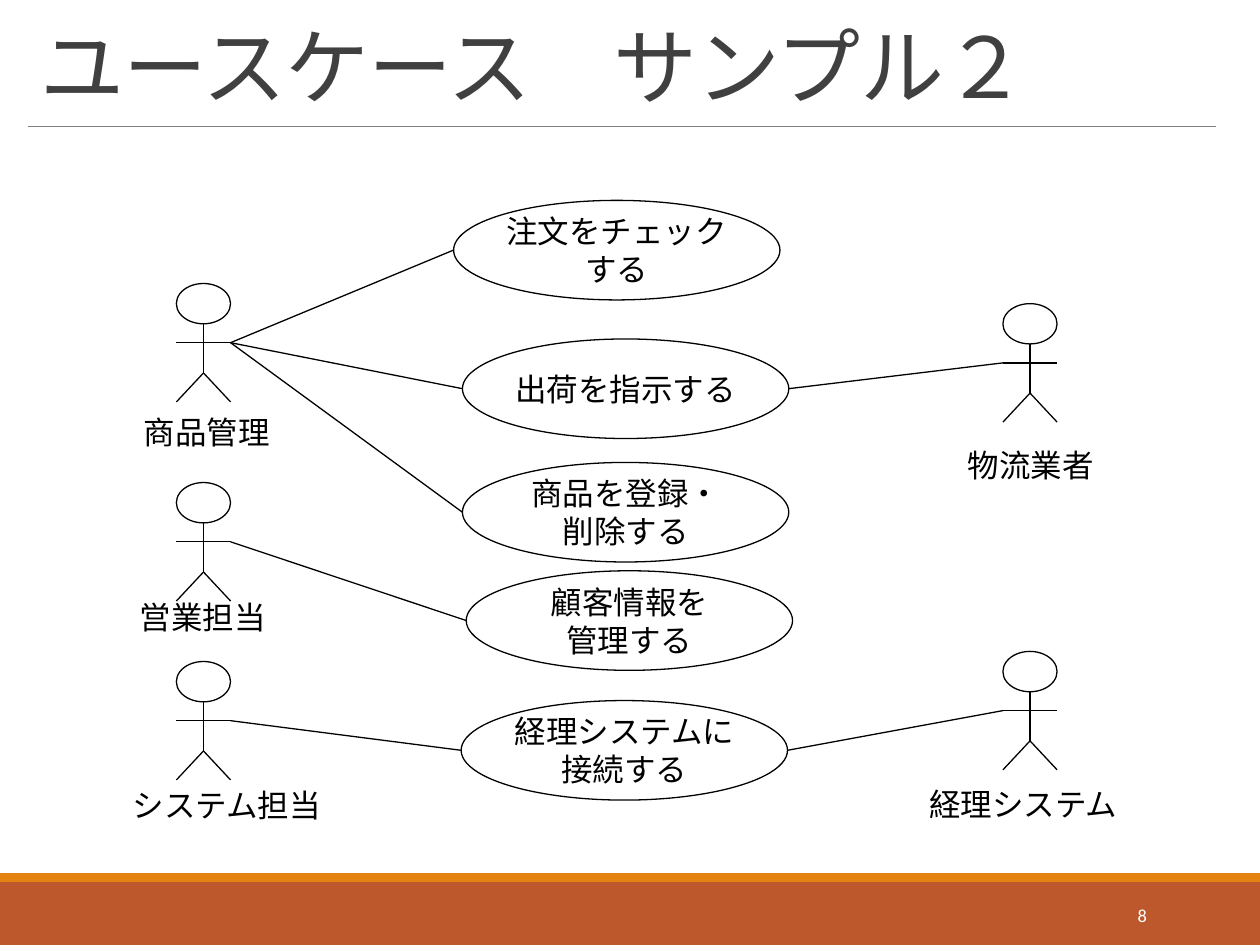
from pptx import Presentation
from pptx.dml.color import RGBColor
from pptx.enum.shapes import MSO_CONNECTOR, MSO_SHAPE
from pptx.enum.text import MSO_ANCHOR as ANCHOR, PP_ALIGN as ALIGN
from pptx.oxml.ns import qn
from pptx.util import Inches, Pt
from lxml.etree import SubElement

COLORS = {
    "black": "000000",
    "white": "FFFFFF",
    "title": "404040",
    "rule": "808080",
    "band": "BD582C",
    "stripe": "E48312",
}
FONT = "Calibri"
CASE_W, CASE_H = 2.59, 0.79
ACTOR_W, HEAD_H, ARM_Y, HIP_Y, FOOT_Y = 0.43, 0.32, 0.47, 0.71, 0.94

ACTORS = {
    "商品管理": {"at": (1.4, 2.25), "label": (0.8, 3.23, 1.68)},
    "営業担当": {"at": (1.4, 3.83), "label": (0.77, 4.7, 1.68)},
    "システム担当": {"at": (1.4, 5.25), "label": (0.69, 6.19, 2.22)},
    "物流業者": {"at": (7.96, 2.41), "label": (7.34, 3.49, 1.68)},
    "経理システム": {"at": (7.96, 5.17), "label": (7.01, 6.18, 2.22)},
}
CASES = [
    {"at": (3.6, 1.59), "lines": ["注文をチェック", "する"], "left": "商品管理"},
    {"at": (3.67, 2.69), "lines": ["出荷を指示する"], "left": "商品管理",
     "right": "物流業者"},
    {"at": (3.67, 3.67), "lines": ["商品を登録・", "削除する"], "left": "商品管理"},
    {"at": (3.7, 4.53), "lines": ["顧客情報を", "管理する"], "left": "営業担当"},
    {"at": (3.66, 5.56), "lines": ["経理システムに", "接続する"],
     "left": "システム担当", "right": "経理システム"},
]


def rgb(name):
    return RGBColor.from_string(COLORS[name])


def write(sp, lines, size=18, color="black", align=ALIGN.CENTER, spacing=None, **frame):
    tf = sp.text_frame
    for name, value in frame.items():
        setattr(tf, name, value)
    for i, line in enumerate(lines):
        p = tf.paragraphs[0] if i == 0 else tf.add_paragraph()
        p.alignment = align
        p.line_spacing = spacing
        r = p.add_run()
        r.text = line
        for name, value in {"name": FONT, "size": Pt(size)}.items():
            setattr(r.font, name, value)
        r.font.color.rgb = rgb(color)
    return sp


def add_text(slide, box, text, **style):
    sp = slide.shapes.add_textbox(*map(Inches, box))
    return write(sp, [text], **{"word_wrap": True, **style})


def add_bar(slide, box, color):
    sp = slide.shapes.add_shape(MSO_SHAPE.RECTANGLE, *map(Inches, box))
    sp.shadow.inherit = False
    sp.fill.solid()
    sp.fill.fore_color.rgb = rgb(color)
    sp.line.fill.background()


def add_line(shapes, start, end, color="black", width=0.75):
    line = shapes.add_connector(MSO_CONNECTOR.STRAIGHT, *map(Inches, (*start, *end)))
    line.line.color.rgb = rgb(color)
    line.line.width = Pt(width)
    SubElement(line._element.spPr, qn("a:effectLst"))


def add_ellipse(shapes, box):
    sp = shapes.add_shape(MSO_SHAPE.OVAL, *map(Inches, box))
    sp.shadow.inherit = False
    sp.fill.background()
    sp.line.color.rgb = rgb("black")
    sp.line.width = Pt(0.75)
    return sp


def add_actor(slide, name, at, label):
    x, y = at
    mid, right = x + ACTOR_W / 2, x + ACTOR_W
    hip = (mid, y + HIP_Y)
    shapes = slide.shapes.add_group_shape().shapes
    add_ellipse(shapes, (x, y, ACTOR_W, HEAD_H))
    add_line(shapes, (mid, y + HEAD_H), hip)
    for foot in (x, right):
        add_line(shapes, hip, (foot, y + FOOT_Y))
    add_line(shapes, (x, y + ARM_Y), (right, y + ARM_Y))
    add_text(slide, (*label, 0.4), name)


def add_case(slide, at, lines, left, right=None):
    x, y = at
    sp = add_ellipse(slide.shapes, (x, y, CASE_W, CASE_H))
    write(sp, lines, word_wrap=False, vertical_anchor=ANCHOR.MIDDLE)
    mid = y + CASE_H / 2
    ax, ay = ACTORS[left]["at"]
    add_line(slide.shapes, (ax + ACTOR_W, ay + ARM_Y), (x, mid))
    if right:
        ax, ay = ACTORS[right]["at"]
        add_line(slide.shapes, (x + CASE_W, mid), (ax, ay + ARM_Y))


def add_frame(slide):
    add_bar(slide, (0, 7, 10, 0.5), "band")
    add_bar(slide, (0, 6.93, 10, 0.07), "stripe")
    add_line(slide.shapes, (0.22, 1), (9.65, 1), "rule", 0.5)
    title = add_text(slide, (0.22, 0.09, 9.43, 0.88), "ユースケース　サンプル２",
                     size=48, color="title", align=ALIGN.LEFT, spacing=0.85,
                     vertical_anchor=ANCHOR.BOTTOM)
    title.text_frame.paragraphs[0].runs[0].font._element.set("spc", "-50")
    add_text(slide, (8.12, 7.06, 1.08, 0.4), "8", size=10.5, color="white",
             align=ALIGN.RIGHT, vertical_anchor=ANCHOR.MIDDLE)


def main():
    prs = Presentation()
    prs.slide_width, prs.slide_height = Inches(10), Inches(7.5)
    slide = prs.slides.add_slide(prs.slide_layouts[6])
    add_frame(slide)
    for name, actor in ACTORS.items():
        add_actor(slide, name, **actor)
    for case in CASES:
        add_case(slide, **case)
    prs.save("out.pptx")


if __name__ == "__main__":
    main()
